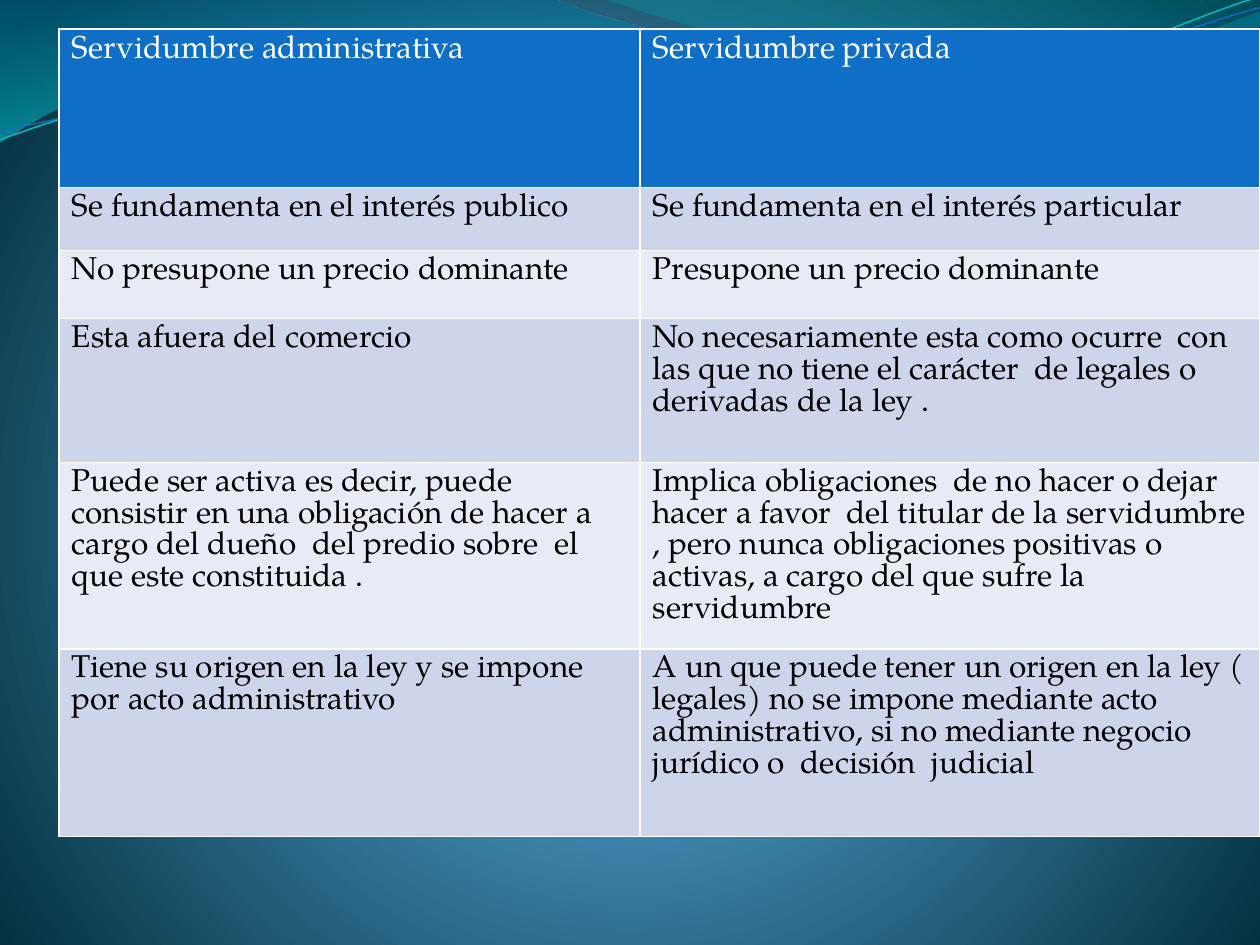
import math
from dataclasses import dataclass

import lxml.etree
import pptx
import pptx.dml.color
import pptx.oxml
import pptx.oxml.ns
import pptx.util
from pptx.oxml.ns import qn
from pptx.util import Inches


@dataclass(frozen=True)
class Theme:
    font: str = "TeX Gyre Pagella"
    text_size: int = 18
    white: str = "FFFFFF"
    black: str = "000000"
    header: str = "0F6FC6"
    bands: tuple = ("CCD5EA", "E7EBF5")
    teal_line: str = "0AB8BF"
    # Gradient stops: position, colour, opacity (percent)
    background: tuple = ((0, "4AA0D6", 100), (25, "4C98C7", 100), (100, "002C38", 100))
    large_wave: tuple = ((0, "0074A1", 45), (100, "00C6CF", 55))
    small_wave: tuple = ((0, "00A1A9", 30), (80, "008BBF", 45))


THEME = Theme()
DOWNWARD = '<a:lin ang="5400000" scaled="0"/>'
FROM_BELOW = ('<a:path path="circle"><a:fillToRect l="10000" t="110000" '
              'r="10000" b="100000"/></a:path>')
CURVE_ROTATION = 357.3

# Outlines in inches: one point is a straight step, three a Bézier curve.
LARGE_WAVE = [
    [(0, 0)], [(4.4, -0.01)], [(4.76, 0.17), (6.64, 0.63), (7.58, 0.63)],
    [(8.53, 0.63), (9.58, 0.26), (10, 0.09)], [(10.01, 0.36)],
    [(9.83, 0.44), (8.7, 0.76), (7.46, 0.75)],
    [(6.22, 0.75), (3.82, 0.28), (2.57, 0.34)],
    [(1.29, 0.36), (0.46, 0.83), (-0.01, 1.13)], [(0, 0)],
]
SMALL_WAVE = [
    [(4.79, -0.01)], [(5.09, 0.11), (6.82, 0.62), (7.69, 0.65)],
    [(8.56, 0.69), (9.61, 0.32), (10, 0.21)], [(10, 0)], [(4.79, -0.01)],
]
TEAL_CURVE = [
    [(0, 1.11)], [(0.48, 0.93), (1.58, 0.57), (2.77, 0.52)],
    [(3.95, 0.47), (5.93, 0.89), (7.13, 0.8)],
    [(8.33, 0.71), (9.38, 0.15), (9.98, -0.02)],
]
BLUE_CURVE = [
    [(0, 1.04)], [(0.47, 0.96), (1.64, 0.61), (2.83, 0.56)],
    [(4.03, 0.51), (5.97, 0.84), (7.17, 0.75)],
    [(8.36, 0.67), (9.41, 0.21), (10, 0.06)],
]

COLUMN_WIDTHS = (4.61, 4.92)
ROW_HEIGHTS = (1.26, 0.5, 0.54, 1.14, 1.48, 1.49)
COMPARISON = [
    ("Servidumbre administrativa", "Servidumbre privada"),
    ("Se fundamenta en el interés publico", "Se fundamenta en el interés particular"),
    ("No presupone un precio dominante", "Presupone un precio dominante"),
    ("Esta afuera del comercio",
     "No necesariamente esta como ocurre  con las que no tiene el carácter  de "
     "legales o derivadas de la ley ."),
    ("Puede ser activa es decir, puede consistir en una obligación de hacer a "
     "cargo del dueño  del predio sobre  el que este constituida .",
     "Implica obligaciones  de no hacer o dejar hacer a favor  del titular de la "
     "servidumbre , pero nunca obligaciones positivas o activas, a cargo del que "
     "sufre la servidumbre"),
    ("Tiene su origen en la ley y se impone por acto administrativo",
     "A un que puede tener un origen en la ley ( legales) no se impone mediante "
     "acto administrativo, si no mediante negocio jurídico o  decisión  judicial"),
]


def rgb(colour):
    return pptx.dml.color.RGBColor.from_string(colour)


def set_gradient(fill, properties, stops, direction):
    """Fill the owner of the properties element with a gradient."""
    fill.solid()
    stop_list = "".join(
        f'<a:gs pos="{position * 1000}"><a:srgbClr val="{colour}">'
        f'<a:alpha val="{opacity * 1000}"/></a:srgbClr></a:gs>'
        for position, colour, opacity in stops)
    gradient = pptx.oxml.parse_xml(
        f'<a:gradFill {pptx.oxml.ns.nsdecls("a")} rotWithShape="1">'
        f"<a:gsLst>{stop_list}</a:gsLst>{direction}</a:gradFill>")
    properties.replace(properties.find(qn("a:solidFill")), gradient)


def add_outline(slide, outline, close):
    """Build the outline through its end points, then bend the curved steps."""
    ends = [(Inches(x), Inches(y)) for x, y in (step[-1] for step in outline)]
    builder = slide.shapes.build_freeform(*ends[0])
    builder.add_line_segments(ends[1:], close=close)
    shape = builder.convert_to_shape()
    shape.shadow.inherit = False
    for line, step in zip(list(shape.element.iter(qn("a:lnTo"))), outline[1:]):
        if len(step) == 3:
            line.tag = qn("a:cubicBezTo")
            line.clear()
            for x, y in step:
                point = lxml.etree.SubElement(line, qn("a:pt"))
                point.set("x", str(Inches(x) - shape.left))
                point.set("y", str(Inches(y) - shape.top))
    return shape


def add_wave(slide, outline, stops):
    shape = add_outline(slide, outline, close=True)
    set_gradient(shape.fill, shape.element.spPr, stops, DOWNWARD)
    shape.line.fill.background()


def turn(outline, centre, degrees):
    cosine, sine = math.cos(math.radians(degrees)), math.sin(math.radians(degrees))
    centre_x, centre_y = centre
    return [[(centre_x + (x - centre_x) * cosine - (y - centre_y) * sine,
              centre_y + (x - centre_x) * sine + (y - centre_y) * cosine)
             for x, y in step] for step in outline]


def add_curve(slide, outline, centre, colour, width):
    """Draw the curve level and let the shape's rotation tilt it into place."""
    level_outline = turn(outline, centre, -CURVE_ROTATION)
    shape = add_outline(slide, level_outline, close=False)
    shape.rotation = CURVE_ROTATION
    shape.fill.background()
    shape.line.color.rgb = rgb(colour)
    shape.line.width = pptx.util.Pt(width)


def write_text(text_frame, text, *, colour, size=THEME.text_size, font=THEME.font):
    run = text_frame.paragraphs[0].add_run()
    run.text = text
    run.font.name = font
    run.font.size = pptx.util.Pt(size)
    run.font.color.rgb = rgb(colour)


def add_comparison_table(slide):
    """Add the table; its default style draws the white borders."""
    frame = slide.shapes.add_table(
        len(ROW_HEIGHTS), len(COLUMN_WIDTHS), Inches(0.47), Inches(0.23),
        Inches(sum(COLUMN_WIDTHS)), Inches(sum(ROW_HEIGHTS)))
    table = frame.table
    for column, width in zip(table.columns, COLUMN_WIDTHS):
        column.width = Inches(width)
    for index, (row, height, texts) in enumerate(
            zip(table.rows, ROW_HEIGHTS, COMPARISON)):
        row.height = Inches(height)
        is_header = index == 0
        fill = THEME.header if is_header else THEME.bands[(index - 1) % 2]
        for cell, text in zip(row.cells, texts):
            cell.fill.solid()
            cell.fill.fore_color.rgb = rgb(fill)
            write_text(cell.text_frame, text,
                       colour=THEME.white if is_header else THEME.black)


def main():
    presentation = pptx.Presentation()
    presentation.slide_width = Inches(10)
    presentation.slide_height = Inches(7.5)
    slide = presentation.slides.add_slide(presentation.slide_layouts[6])

    background_fill = slide.background.fill
    background_properties = slide.element.find(".//" + qn("p:bgPr"))
    set_gradient(background_fill, background_properties, THEME.background, FROM_BELOW)

    add_wave(slide, LARGE_WAVE, THEME.large_wave)
    add_wave(slide, SMALL_WAVE, THEME.small_wave)
    add_curve(slide, TEAL_CURVE, (4.99, 0.58), THEME.teal_line, 0.85)
    add_curve(slide, BLUE_CURVE, (5, 0.59), THEME.header, 0.75)
    add_comparison_table(slide)
    presentation.save("out.pptx")


if __name__ == "__main__":
    main()
